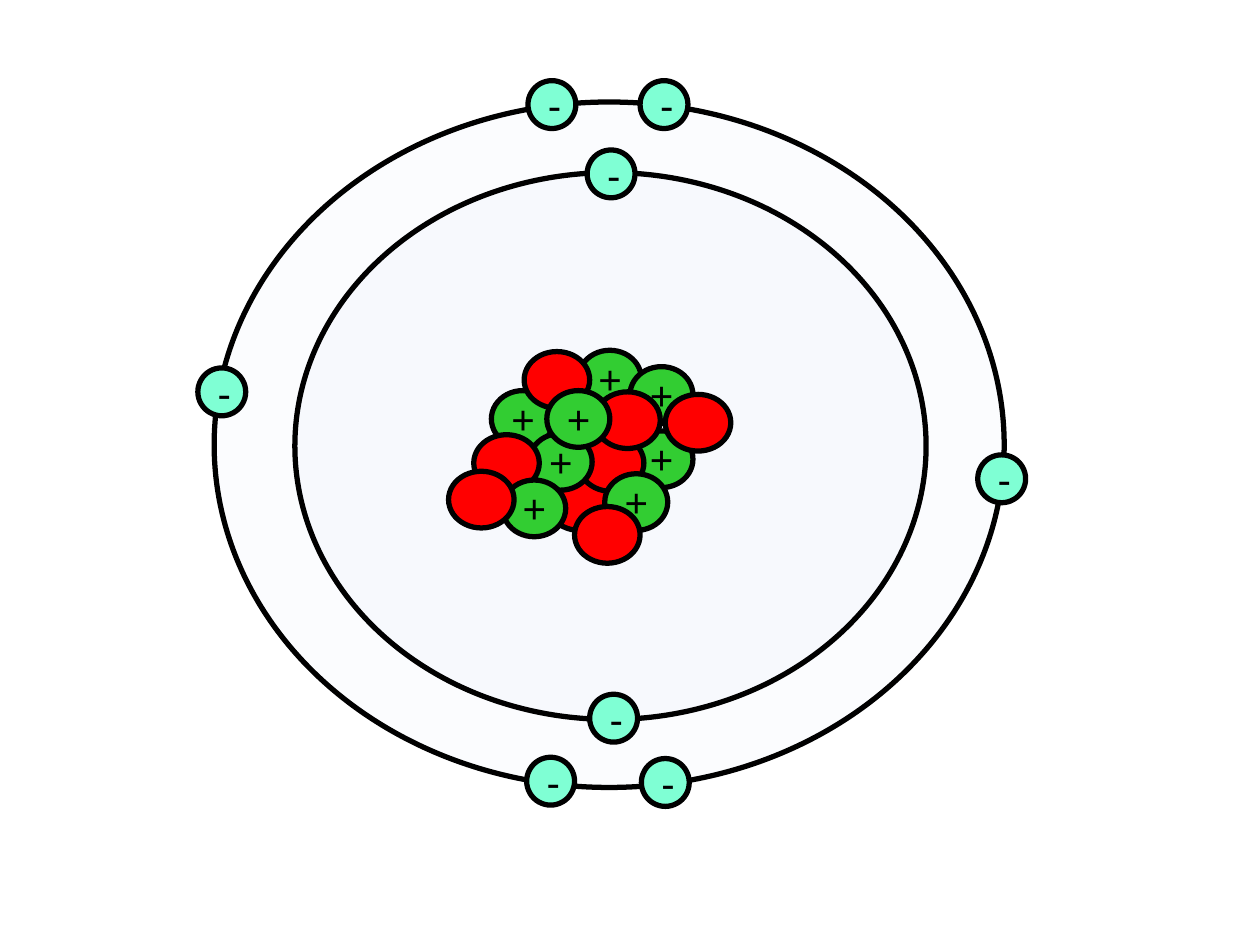
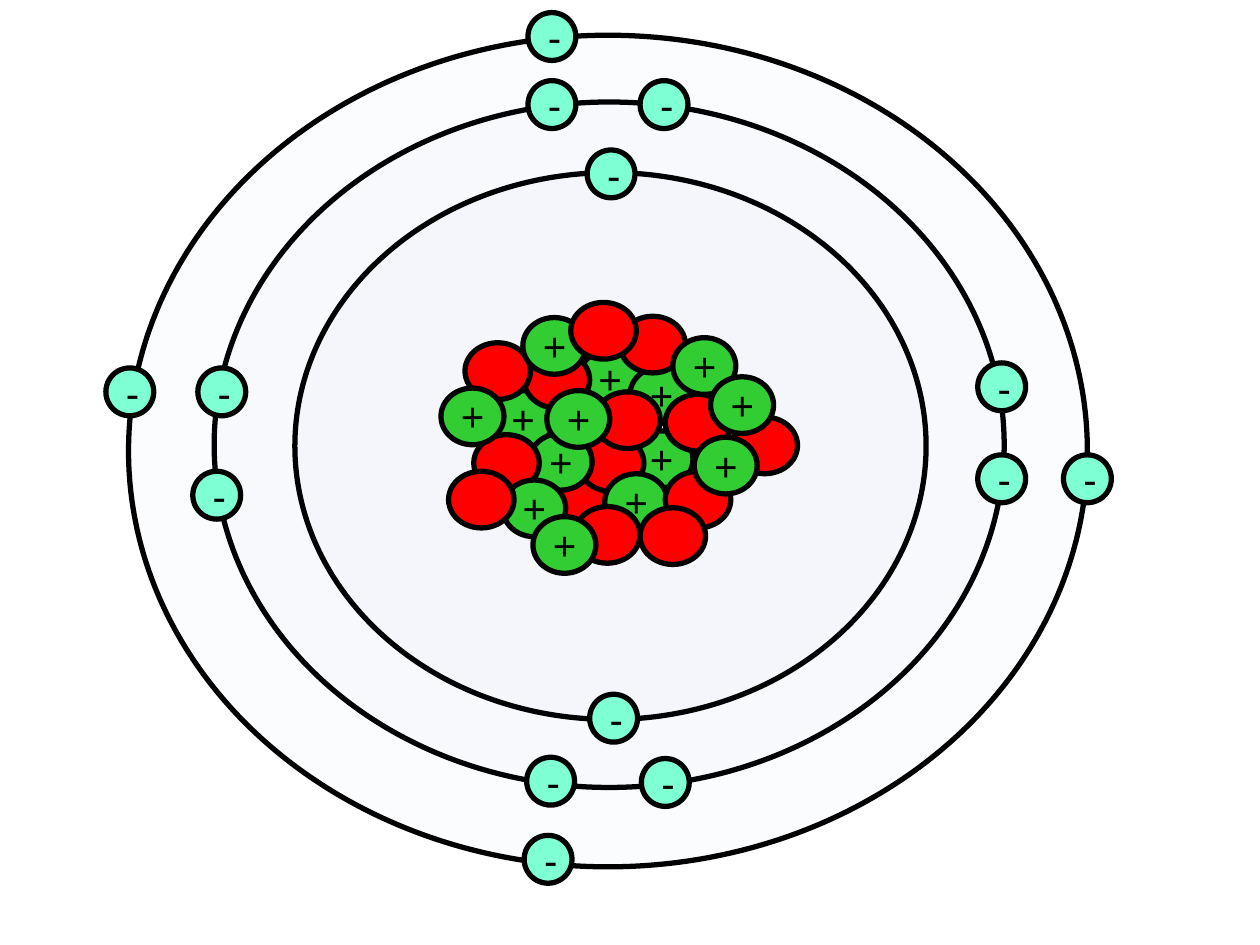
from pptx import Presentation
from pptx.dml.color import RGBColor
from pptx.enum.shapes import MSO_SHAPE
from pptx.enum.text import MSO_AUTO_SIZE
from pptx.oxml.ns import qn
from pptx.util import Inches, Pt
from lxml.etree import SubElement

COLORS = {
    "ink": "000000",
    "shell": "6080E0",
    "electron": "7FFFD4",
    "proton": "32CD32",
    "neutron": "FF0000",
}
FONT = "Arial"
SIZES = {"electron": (0.38, 0.38), "proton": (0.5, 0.45), "neutron": (0.52, 0.45)}
SIGNS = {"electron": ("-", 0.06, -0.05, 0.7), "proton": ("+", 0.06, -0.02, 0.85)}

SHELLS = [(1.7, 0.81, 6.27, 5.44), (2.34, 1.37, 5.01, 4.34)]
OUTER = (1.02, 0.28, 7.61, 6.6)

INNER = [
    (4.66, 1.19), (4.68, 5.51), (5.08, 0.64), (4.19, 0.64), (4.18, 6.01),
    (5.09, 6.02), (7.76, 3.61), (1.57, 2.92),
]
ADDED = [
    (7.76, 2.88), (1.53, 3.74), (0.84, 2.92), (4.16, 6.63), (8.44, 3.61),
    (4.19, 0.1),
]

P, N = "proton", "neutron"
CORE = [
    (P, 3.9, 3.1, "both"),
    (P, 4.59, 2.78, "both"),
    (P, 5, 3.42, "both"),
    (N, 4.16, 2.79, "both"),
    (N, 4.34, 3.76, "both"),
    (N, 4.59, 3.45, "both"),
    (P, 4.2, 3.44, "both"),
    (P, 5, 2.91, "both"),
    (P, 4.8, 3.76, "both"),
    (N, 3.76, 3.45, "both"),
    (N, 3.69, 2.72, "large"),
    (N, 4.92, 2.51, "large"),
    (N, 5.28, 3.13, "both"),
    (N, 5.28, 3.74, "large"),
    (N, 4.72, 3.11, "both"),
    (P, 4.34, 3.1, "both"),
    (N, 5.81, 3.31, "large"),
    (P, 4.15, 2.52, "large"),
    (P, 5.34, 2.68, "large"),
    (P, 5.51, 3.47, "large"),
    (P, 3.5, 3.08, "large"),
    (P, 3.99, 3.81, "both"),
    (P, 5.64, 2.99, "large"),
    (N, 4.56, 4.02, "both"),
    (N, 5.08, 4.03, "large"),
    (N, 3.56, 3.74, "both"),
    (N, 4.53, 2.4, "large"),
    (P, 4.23, 4.1, "large"),
]


def color(name):
    return RGBColor.from_string(COLORS[name])


def add_oval(shapes, box, fill):
    oval = shapes.add_shape(MSO_SHAPE.OVAL, *map(Inches, box))
    oval.shadow.inherit = False
    oval.fill.solid()
    oval.fill.fore_color.rgb = color(fill)
    oval.line.color.rgb = color("ink")
    oval.line.width = Pt(3)
    return oval


def add_shell(shapes, box):
    oval = add_oval(shapes, box, "shell")
    tint = oval.fill._xPr.find(qn("a:solidFill"))[0]
    SubElement(tint, qn("a:alpha")).set("val", "2000")


def add_sign(shapes, kind, x, y):
    sign, dx, dy, width = SIGNS[kind]
    box = shapes.add_textbox(*map(Inches, (x + dx, y + dy, width, 0.49)))
    frame = box.text_frame
    frame.word_wrap = True
    frame.auto_size = MSO_AUTO_SIZE.SHAPE_TO_FIT_TEXT
    frame.text = sign
    font = frame.paragraphs[0].runs[0].font
    font.name = FONT
    font.size = Pt(23)
    font.color.rgb = color("ink")


def add_ball(shapes, kind, x, y):
    if kind in SIGNS:
        shapes = shapes.add_group_shape().shapes
    add_oval(shapes, (x, y, *SIZES[kind]), kind)
    if kind in SIGNS:
        add_sign(shapes, kind, x, y)


def add_atom(deck, shells, ring, core):
    shapes = deck.slides.add_slide(deck.slide_layouts[6]).shapes
    for box in shells:
        add_shell(shapes, box)
    for x, y in ring:
        add_ball(shapes, "electron", x, y)
    for kind, x, y, _ in core:
        add_ball(shapes, kind, x, y)


def main():
    deck = Presentation()
    deck.slide_width = Inches(10)
    deck.slide_height = Inches(7.5)
    small = [ball for ball in CORE if ball[3] == "both"]
    add_atom(deck, SHELLS, INNER, small)
    add_atom(deck, SHELLS + [OUTER], INNER + ADDED, CORE)
    deck.save("out.pptx")


if __name__ == "__main__":
    main()
